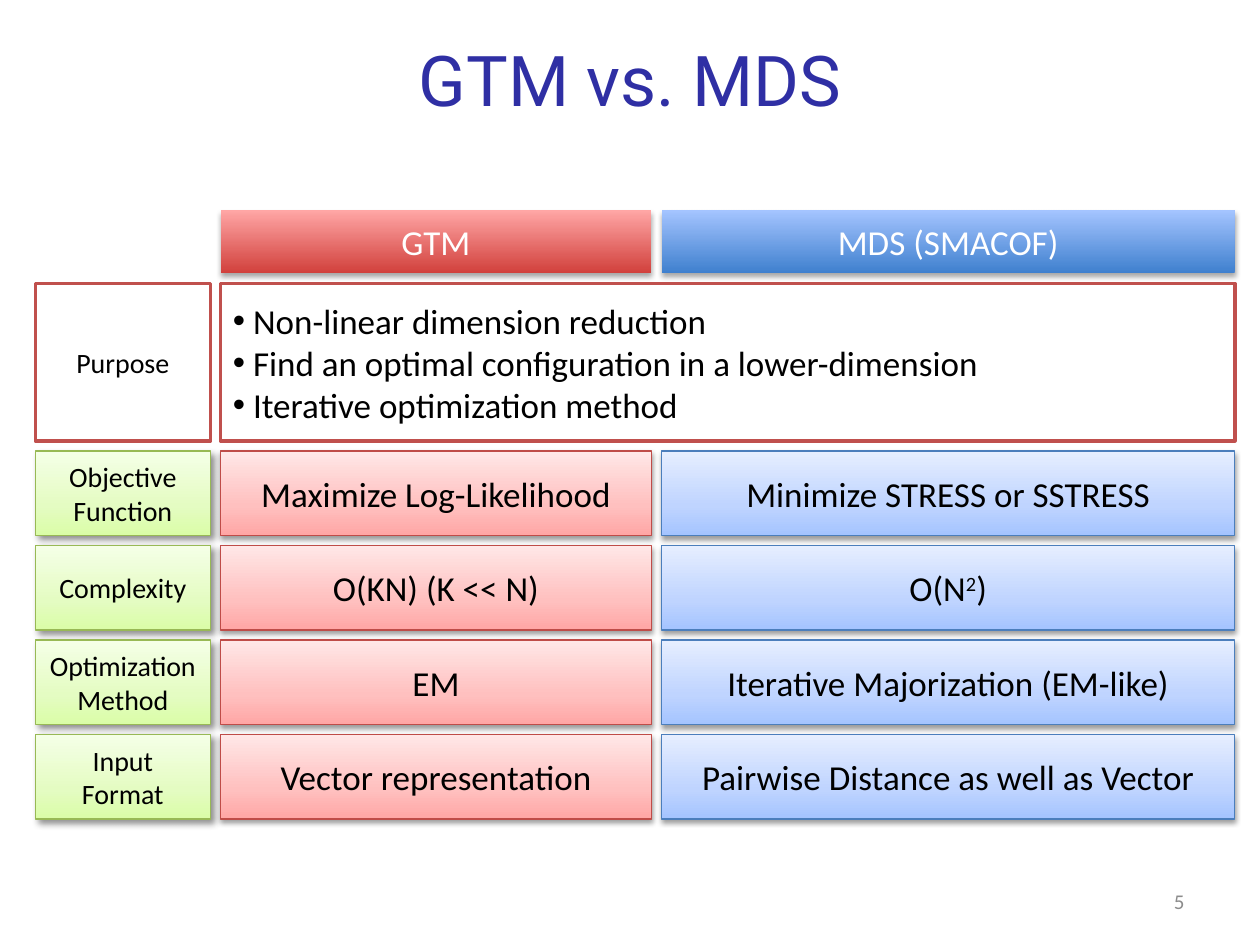
from lxml.etree import SubElement
from pptx import Presentation
from pptx.dml.color import RGBColor
from pptx.enum.shapes import MSO_SHAPE
from pptx.enum.text import MSO_ANCHOR, PP_ALIGN
from pptx.oxml.ns import qn
from pptx.util import Inches, Pt

BLACK = RGBColor(0x00, 0x00, 0x00)
WHITE = RGBColor(0xFF, 0xFF, 0xFF)
NAVY = RGBColor(0x2F, 0x2F, 0xA4)
GRAY = RGBColor(0x8C, 0x8C, 0x8C)
BRICK = RGBColor(0xC0, 0x50, 0x4D)
RED = RGBColor(0xBF, 0x4C, 0x48)
BLUE = RGBColor(0x4B, 0x7E, 0xBC)
GREEN = RGBColor(0x98, 0xB9, 0x55)

HEADS = [
    ("GTM", [(0, RGBColor(0xD1, 0x40, 0x3C)), (100, RGBColor(0xFF, 0xA6, 0xA5))]),
    ("MDS (SMACOF)", [(0, RGBColor(0x3F, 0x80, 0xCE)), (100, RGBColor(0xA4, 0xC4, 0xFF))]),
]
GOALS = [
    "Non-linear dimension reduction",
    "Find an optimal configuration in a lower-dimension",
    "Iterative optimization method",
]
ROWS = [
    ("Objective\nFunction", "Maximize Log-Likelihood", "Minimize STRESS or SSTRESS"),
    ("Complexity", "O(KN) (K << N)", "O(N^2^)"),
    ("Optimization\nMethod", "EM", "Iterative Majorization (EM-like)"),
    ("Input\nFormat", "Vector representation", "Pairwise Distance as well as Vector"),
]

HEAD_SHADE = (35, 3.1, 1.8, 90)
CELL_SHADE = (38, 3.1, 1.6, 90)
SIDE_SHADE = (43, 4, 3, 45)
LOOKS = [
    dict(fill=[(0, RGBColor(0xDA, 0xFD, 0xA7)), (35, RGBColor(0xE4, 0xFC, 0xC2)),
               (100, RGBColor(0xF5, 0xFF, 0xE7))], line=GREEN, shade=SIDE_SHADE, size=16),
    dict(fill=[(0, RGBColor(0xFF, 0xA6, 0xA5)), (35, RGBColor(0xFF, 0xC0, 0xBF)),
               (100, RGBColor(0xFF, 0xE7, 0xE7))], line=RED, shade=CELL_SHADE),
    dict(fill=[(0, RGBColor(0xA4, 0xC4, 0xFF)), (35, RGBColor(0xBF, 0xD4, 0xFF)),
               (100, RGBColor(0xE6, 0xEE, 0xFF))], line=BLUE, shade=CELL_SHADE),
]
FRAME = dict(fill=WHITE, line=BRICK, weight=2)

COLS = [(0.28, 1.39), (1.75, 3.42), (5.25, 4.55)]
TOP, GAP = 1.67, 0.08
HEAD_H, GOAL_H, ROW_H = 0.5, 1.25, 0.67
GOAL_Y = TOP + HEAD_H + GAP
ROW_Y = GOAL_Y + GOAL_H + GAP

deck = Presentation()
deck.slide_width, deck.slide_height = Inches(10), Inches(7.5)
slide = deck.slides.add_slide(deck.slide_layouts[6])


def write(shape, text, size=20, font="Calibri", color=BLACK,
          align=PP_ALIGN.CENTER, bullet=False):
    frame = shape.text_frame
    frame.word_wrap = True
    frame.vertical_anchor = MSO_ANCHOR.MIDDLE
    for i, row in enumerate(text.split("\n")):
        para = frame.add_paragraph() if i else frame.paragraphs[0]
        para.alignment = align
        if bullet:
            props = para._p.get_or_add_pPr()
            props.set("marL", str(Inches(0.16)))
            props.set("indent", str(-Inches(0.16)))
            SubElement(props, qn("a:buFont"), typeface="Arial")
            SubElement(props, qn("a:buChar"), char="•")
        for j, part in enumerate(row.split("^")):
            run = para.add_run()
            run.text = part
            run.font.size = Pt(size)
            run.font.name = font
            run.font.color.rgb = color
            if j % 2:
                run.font._element.set("baseline", "30000")


def blend(shape, stops):
    shape.fill.gradient()
    shape.fill.gradient_angle = 90
    items = shape._element.spPr.find(qn("a:gradFill")).find(qn("a:gsLst"))
    for item in list(items):
        items.remove(item)
    for spot, color in stops:
        stop = SubElement(items, qn("a:gs"), pos=str(spot * 1000))
        SubElement(stop, qn("a:srgbClr"), val=str(color))


def cast(shape, alpha, blur, dist, angle):
    glow = shape._element.spPr.find(qn("a:effectLst"))
    shade = SubElement(glow, qn("a:outerShdw"), blurRad=str(Pt(blur)),
                       dist=str(Pt(dist)), dir=str(angle * 60000), rotWithShape="0")
    color = SubElement(shade, qn("a:srgbClr"), val=str(BLACK))
    SubElement(color, qn("a:alpha"), val=str(alpha * 1000))


def box(x, y, w, h, text, fill, line=None, weight=0.75, shade=None, **style):
    shape = slide.shapes.add_shape(
        MSO_SHAPE.RECTANGLE, Inches(x), Inches(y), Inches(w), Inches(h))
    shape.shadow.inherit = False
    if isinstance(fill, list):
        blend(shape, fill)
    else:
        shape.fill.solid()
        shape.fill.fore_color.rgb = fill
    if line is None:
        shape.line.fill.background()
    else:
        shape.line.color.rgb = line
        shape.line.width = Pt(weight)
    if shade:
        cast(shape, *shade)
    write(shape, text, **style)


def label(x, y, w, h, text, **style):
    area = slide.shapes.add_textbox(Inches(x), Inches(y), Inches(w), Inches(h))
    write(area, text, **style)


label(0.5, 0, 9, 1.25, "GTM vs. MDS", size=40, font="Roboto", color=NAVY)
label(7.17, 6.95, 2.33, 0.4, "5", size=12, color=GRAY, align=PP_ALIGN.RIGHT)

for (x, w), (text, fill) in zip(COLS[1:], HEADS):
    box(x, TOP, w, HEAD_H, text, fill, shade=HEAD_SHADE, color=WHITE)

side_x, side_w = COLS[0]
goal_x = COLS[1][0]
goal_w = sum(COLS[2]) - goal_x
box(side_x, GOAL_Y, side_w, GOAL_H, "Purpose", size=16, **FRAME)
box(goal_x, GOAL_Y, goal_w, GOAL_H, "\n".join(GOALS),
    align=PP_ALIGN.LEFT, bullet=True, **FRAME)

for i, row in enumerate(ROWS):
    y = ROW_Y + i * (ROW_H + GAP)
    for (x, w), text, look in zip(COLS, row, LOOKS):
        box(x, y, w, ROW_H, text, **look)

deck.save("out.pptx")
